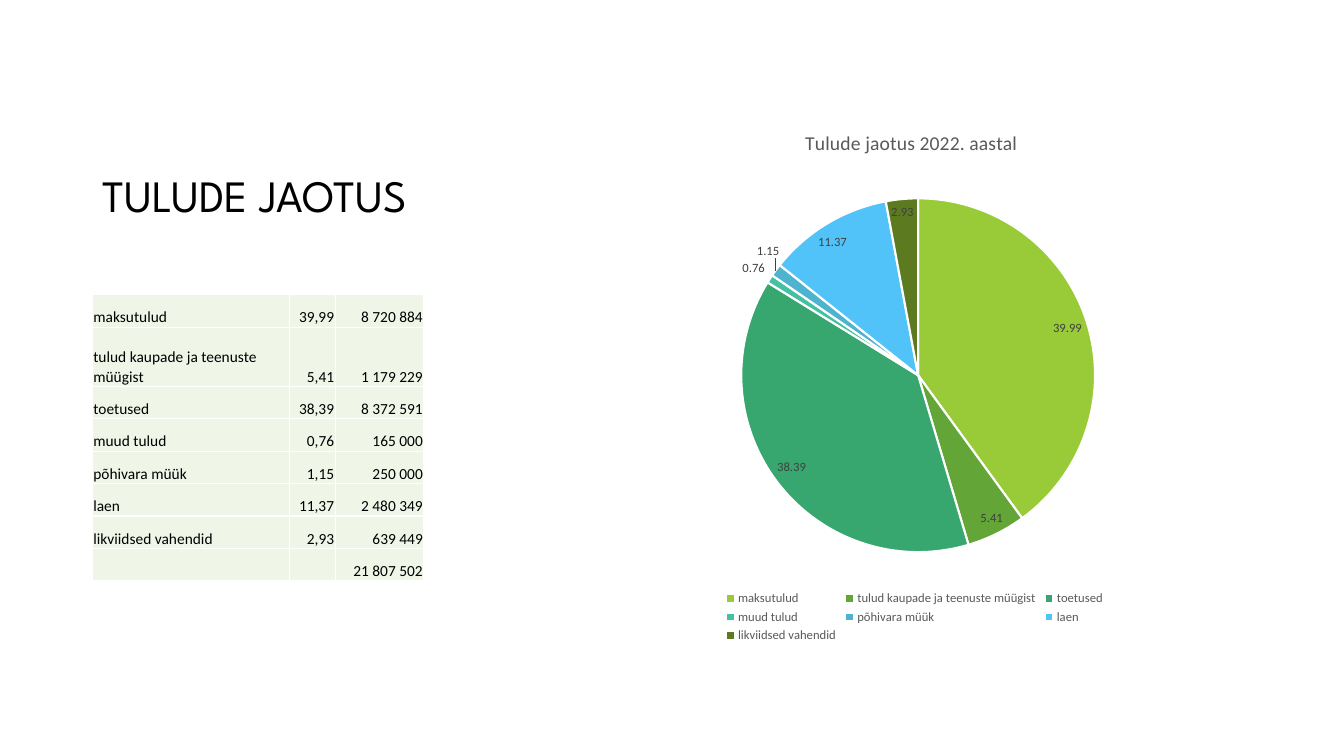
from pptx import Presentation
from pptx.chart.data import CategoryChartData
from pptx.dml.color import RGBColor
from pptx.enum.chart import XL_CHART_TYPE, XL_LABEL_POSITION, XL_LEGEND_POSITION
from pptx.enum.text import MSO_ANCHOR, PP_ALIGN
from pptx.oxml import parse_xml
from pptx.oxml.ns import nsdecls, qn
from pptx.util import Pt

TITLE = "TULUDE JAOTUS"
CHART_TITLE = "Tulude jaotus 2022. aastal"
INCOME = [
    ("maksutulud", 39.99, "8 720 884", "99CB38"),
    ("tulud kaupade ja teenuste müügist", 5.41, "1 179 229", "63A537"),
    ("toetused", 38.39, "8 372 591", "37A76F"),
    ("muud tulud", 0.76, "165 000", "44C1A3"),
    ("põhivara müük", 1.15, "250 000", "4EB3CF"),
    ("laen", 11.37, "2 480 349", "51C3F9"),
    ("likviidsed vahendid", 2.93, "639 449", "5C7B20"),
]
TOTAL = "21 807 502"
COLUMN_WIDTHS = (141, 32.4, 63.4)
ROW_HEIGHT, TALL_ROW_HEIGHT = 23.2, 42.2
PIE_AREA = {"x": 0.25, "y": 0.16, "w": 0.52, "h": 0.67}
LEGEND_AREA = {"x": 0.22, "y": 0.89, "w": 0.57, "h": 0.11}


def color(value):
    return RGBColor.from_string(value)


def style_font(font, size, shade, name="Calibri"):
    font.size, font.name, font.bold = Pt(size), name, False
    font.color.rgb = color(shade)


def write(frame, text, size=11, shade="000000", name="Calibri", align=PP_ALIGN.LEFT, spacing=None):
    para = frame.paragraphs[0]
    para.alignment = align
    para.line_spacing = spacing
    span = para.add_run()
    span.text = text
    style_font(span.font, size, shade, name)


def add_borders(cell, shade, width):
    properties = cell._tc.get_or_add_tcPr()
    for side in ("lnL", "lnR", "lnT", "lnB"):
        properties.append(parse_xml(
            f'<a:{side} {nsdecls("a")} w="{Pt(width)}"><a:solidFill>'
            f'<a:srgbClr val="{shade}"/></a:solidFill></a:{side}>'))


def place_part(part, index, area, target=""):
    for former in part.findall(qn("c:layout")):
        part.remove(former)
    modes = "".join(f'<c:{axis}Mode val="edge"/>' for axis in "xy")
    sizes = "".join(f'<c:{key} val="{value}"/>' for key, value in area.items())
    part.insert(index, parse_xml(
        f'<c:layout {nsdecls("c")}><c:manualLayout>{target}{modes}{sizes}</c:manualLayout></c:layout>'))


def add_title(page):
    box = page.shapes.add_textbox(Pt(66), Pt(36), Pt(310), Pt(126))
    box.text_frame.word_wrap = True
    box.text_frame.vertical_anchor = MSO_ANCHOR.BOTTOM
    write(box.text_frame, TITLE, size=32, name="League Spartan", spacing=0.9)


def add_income_table(page):
    rows = [(label, f"{share:.2f}".replace(".", ","), amount) for label, share, amount, _ in INCOME]
    rows.append(("", "", TOTAL))
    heights = [TALL_ROW_HEIGHT if len(row[0]) > 30 else ROW_HEIGHT for row in rows]
    table = page.shapes.add_table(len(rows), len(COLUMN_WIDTHS), Pt(66), Pt(210.5),
                                  Pt(sum(COLUMN_WIDTHS)), Pt(sum(heights))).table
    table.first_row = table.horz_banding = False
    for column, width in zip(table.columns, COLUMN_WIDTHS):
        column.width = Pt(width)
    for row_index, row in enumerate(rows):
        table.rows[row_index].height = Pt(heights[row_index])
        for column_index, text in enumerate(row):
            cell = table.cell(row_index, column_index)
            cell.margin_left = cell.margin_right = cell.margin_top = Pt(0.7)
            cell.margin_bottom = Pt(0)
            cell.vertical_anchor = MSO_ANCHOR.BOTTOM
            add_borders(cell, "FFFFFF", 1)
            cell.fill.solid()
            cell.fill.fore_color.rgb = color("EFF6E8")
            write(cell.text_frame, text, align=PP_ALIGN.RIGHT if column_index else PP_ALIGN.LEFT)


def add_income_chart(page):
    data = CategoryChartData()
    data.categories = [item[0] for item in INCOME]
    data.add_series("Series 1", [item[1] for item in INCOME])
    chart = page.shapes.add_chart(XL_CHART_TYPE.PIE, Pt(408), Pt(78), Pt(486), Pt(384), data).chart
    style_font(chart.font, 10, "000000")

    chart.has_title = True
    write(chart.chart_title.text_frame, CHART_TITLE, size=14, shade="595959", align=PP_ALIGN.CENTER)
    chart.chart_title.include_in_layout = False

    chart.has_legend = True
    chart.legend.position = XL_LEGEND_POSITION.BOTTOM
    chart.legend.include_in_layout = False
    style_font(chart.legend.font, 9, "595959")
    place_part(chart.legend._element, 1, LEGEND_AREA)

    plot = chart.plots[0]
    plot.vary_by_categories = True
    place_part(plot._element.getparent(), 0, PIE_AREA, '<c:layoutTarget val="inner"/>')
    series = plot.series[0]
    for index, item in enumerate(INCOME):
        slice_format = series.points[index].format
        slice_format.fill.solid()
        slice_format.fill.fore_color.rgb = color(item[3])
        slice_format.line.width = Pt(1.5)
        slice_format.line.color.rgb = color("FFFFFF")

    labels = series.data_labels
    labels.show_value = True
    labels.number_format = "#,##0.00"
    labels.number_format_is_linked = False
    labels.position = XL_LABEL_POSITION.BEST_FIT
    style_font(labels.font, 9, "404040")


def main():
    deck = Presentation()
    deck.slide_width, deck.slide_height = Pt(960), Pt(540)
    page = deck.slides.add_slide(deck.slide_layouts[6])
    add_title(page)
    add_income_chart(page)
    add_income_table(page)
    deck.save("out.pptx")


if __name__ == "__main__":
    main()
